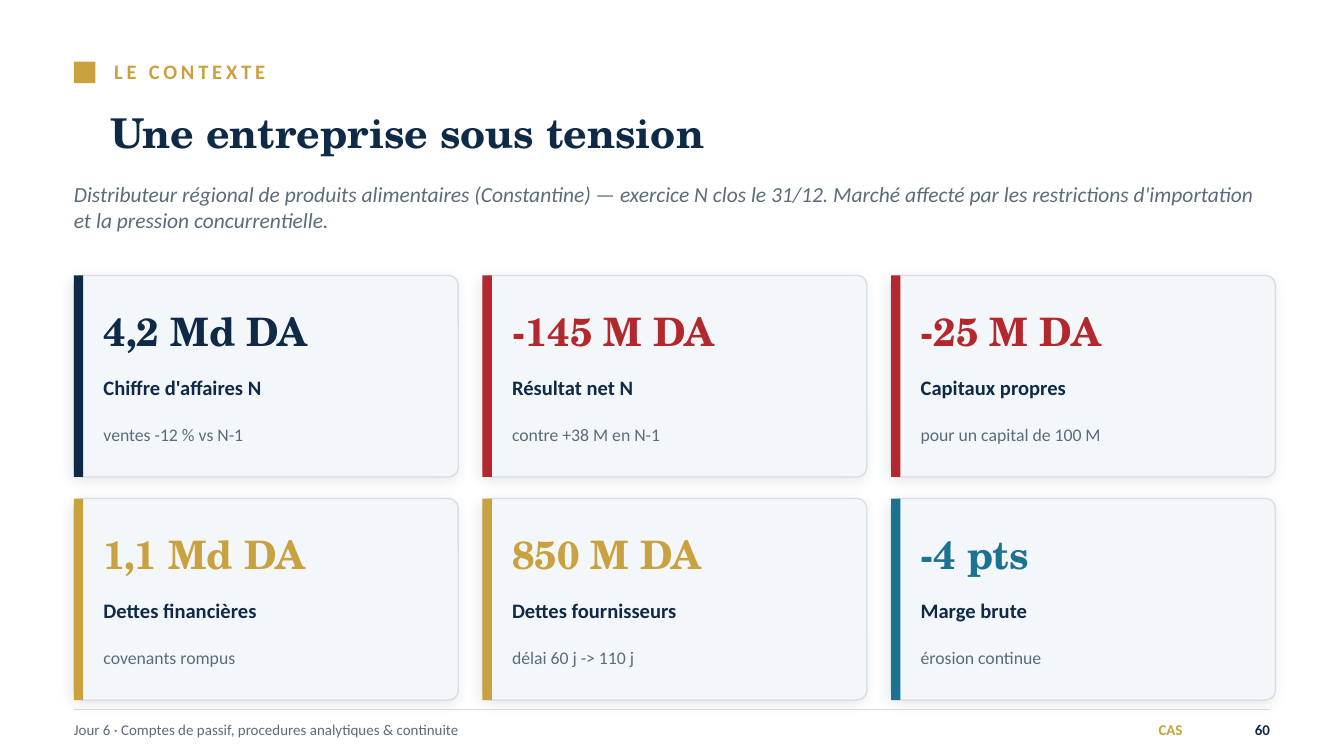
import lxml.etree
import pptx
import pptx.dml.color
import pptx.enum.shapes
import pptx.enum.text
import pptx.oxml.ns
import pptx.util

SHAPE = pptx.enum.shapes.MSO_SHAPE
ALIGN = pptx.enum.text.PP_ALIGN
ANCHOR = pptx.enum.text.MSO_ANCHOR
PX = 9144  # EMU, 100 px to the inch

COLORS = {
    "navy": "0E2A47", "red": "B3282D", "gold": "C9A23F", "teal": "1C7293",
    "grey": "5B6B7B", "card": "F4F7FA", "border": "D7DEE6", "shadow": "1B2A3A",
}

KICKER = "LE CONTEXTE"
TITLE = "Une entreprise sous tension"
INTRO = (
    "Distributeur régional de produits alimentaires (Constantine) — exercice N "
    "clos le 31/12. Marché affecté par les restrictions d'importation et la "
    "pression concurrentielle."
)
CARDS = [
    ("4,2 Md DA", "Chiffre d'affaires N", "ventes -12 % vs N-1", "navy"),
    ("-145 M DA", "Résultat net N", "contre +38 M en N-1", "red"),
    ("-25 M DA", "Capitaux propres", "pour un capital de 100 M", "red"),
    ("1,1 Md DA", "Dettes financières", "covenants rompus", "gold"),
    ("850 M DA", "Dettes fournisseurs", "délai 60 j -> 110 j", "gold"),
    ("-4 pts", "Marge brute", "érosion continue", "teal"),
]
FOOTER = "Jour 6 · Comptes de passif, procedures analytiques & continuite"
SECTION = "CAS"
PAGE = "60"

# Text styles: font attributes
SERIF, SANS = "TeX Gyre Schola", "Calibri"
STYLES = {
    "kicker": {"name": SANS, "size": 11, "bold": True},
    "title": {"name": SERIF, "size": 22, "bold": True},
    "intro": {"name": SANS, "size": 11.5, "italic": True},
    "value": {"name": SERIF, "size": 21, "bold": True},
    "label": {"name": SANS, "size": 11, "bold": True},
    "note": {"name": SANS, "size": 9.5},
    "footer": {"name": SANS, "size": 8},
    "footer strong": {"name": SANS, "size": 8, "bold": True},
}

# Card grid
LEFT, TOP, COLUMNS = 55, 205, 3
CARD_WIDTH, CARD_HEIGHT, COLUMN_GAP, ROW_GAP = 286, 150, 18, 16
TEXT_INSET, TEXT_WIDTH = 22, 251


def rgb(color):
    return pptx.dml.color.RGBColor.from_string(COLORS[color])


def emu(*lengths):
    return [length * PX for length in lengths]


def format_text(shape, text, style, color, align=ALIGN.LEFT, anchor=ANCHOR.MIDDLE):
    frame = shape.text_frame
    settings = {
        "word_wrap": True, "auto_size": pptx.enum.text.MSO_AUTO_SIZE.NONE,
        "vertical_anchor": anchor, "margin_left": 0, "margin_top": 0,
        "margin_right": 0, "margin_bottom": 0,
    }
    for name, value in settings.items():
        setattr(frame, name, value)
    paragraph = frame.paragraphs[0]
    paragraph.alignment = align
    run = paragraph.add_run()
    run.text = text
    for name, value in STYLES[style].items():
        setattr(run.font, name, pptx.util.Pt(value) if name == "size" else value)
    run.font.color.rgb = rgb(color)
    return run


def add_text(slide, box, *args, **kwargs):
    return format_text(slide.shapes.add_textbox(*emu(*box)), *args, **kwargs)


def add_block(slide, kind, box, fill):
    shape = slide.shapes.add_shape(kind, *emu(*box))
    shape.shadow.inherit = False
    shape.fill.solid()
    shape.fill.fore_color.rgb = rgb(fill)
    shape.line.fill.background()
    return shape


def set_border(line):
    line.color.rgb = rgb("border")
    line.width = pptx.util.Pt(0.75)


def add_soft_shadow(shape):
    qn = pptx.oxml.ns.qn
    effects = shape.element.spPr.find(qn("a:effectLst"))
    shadow = lxml.etree.SubElement(
        effects, qn("a:outerShdw"), blurRad=str(pptx.util.Pt(7)),
        dist=str(pptx.util.Pt(2)), dir=str(135 * 60000), algn="bl", rotWithShape="0")
    color = lxml.etree.SubElement(shadow, qn("a:srgbClr"), val=COLORS["shadow"])
    lxml.etree.SubElement(color, qn("a:alpha"), val="10000")


def add_card(slide, left, top, value, label, note, accent):
    card = add_block(slide, SHAPE.ROUNDED_RECTANGLE,
                     (left, top, CARD_WIDTH, CARD_HEIGHT), "card")
    card.adjustments[0] = 0.047
    set_border(card.line)
    add_soft_shadow(card)
    add_block(slide, SHAPE.RECTANGLE, (left, top, 7, CARD_HEIGHT), accent)
    rows = [
        (16, 50, value, "value", accent),
        (68, 30, label, "label", "navy"),
        (98, 40, note, "note", "grey"),
    ]
    for offset, height, text, style, color in rows:
        box = (left + TEXT_INSET, top + offset, TEXT_WIDTH, height)
        add_text(slide, box, text, style, color)


def add_header(slide):
    add_block(slide, SHAPE.RECTANGLE, (LEFT, 46, 16, 16), "gold")
    kicker = add_text(slide, (85, 40, 860, 26), KICKER, "kicker", "gold")
    kicker.font._element.set("spc", "200")
    title = slide.shapes.title
    title.left, title.top, title.width, title.height = emu(82, 65, 870, 66)
    format_text(title, TITLE, "title", "navy")
    add_text(slide, (LEFT, 135, 890, 55), INTRO, "intro", "grey", anchor=ANCHOR.TOP)


def add_footer(slide):
    rule = slide.shapes.add_connector(
        pptx.enum.shapes.MSO_CONNECTOR.STRAIGHT, *emu(LEFT, 528, 945, 528))
    set_border(rule.line)
    lxml.etree.SubElement(rule.element.spPr, pptx.oxml.ns.qn("a:effectLst"))
    add_text(slide, (LEFT, 530, 640, 25), FOOTER, "footer", "grey")
    add_text(slide, (690, 530, 190, 25), SECTION, "footer strong", "gold", ALIGN.RIGHT)
    add_text(slide, (900, 530, 45, 25), PAGE, "footer strong", "navy", ALIGN.RIGHT)


def main():
    presentation = pptx.Presentation()
    presentation.slide_width = 1000 * PX
    presentation.slide_height = presentation.slide_width * 9 // 16
    slide = presentation.slides.add_slide(presentation.slide_layouts.get_by_name("Title Only"))
    add_header(slide)
    add_footer(slide)
    for index, card in enumerate(CARDS):
        row, column = divmod(index, COLUMNS)
        add_card(slide, LEFT + column * (CARD_WIDTH + COLUMN_GAP),
                 TOP + row * (CARD_HEIGHT + ROW_GAP), *card)
    presentation.save("out.pptx")


if __name__ == "__main__":
    main()
